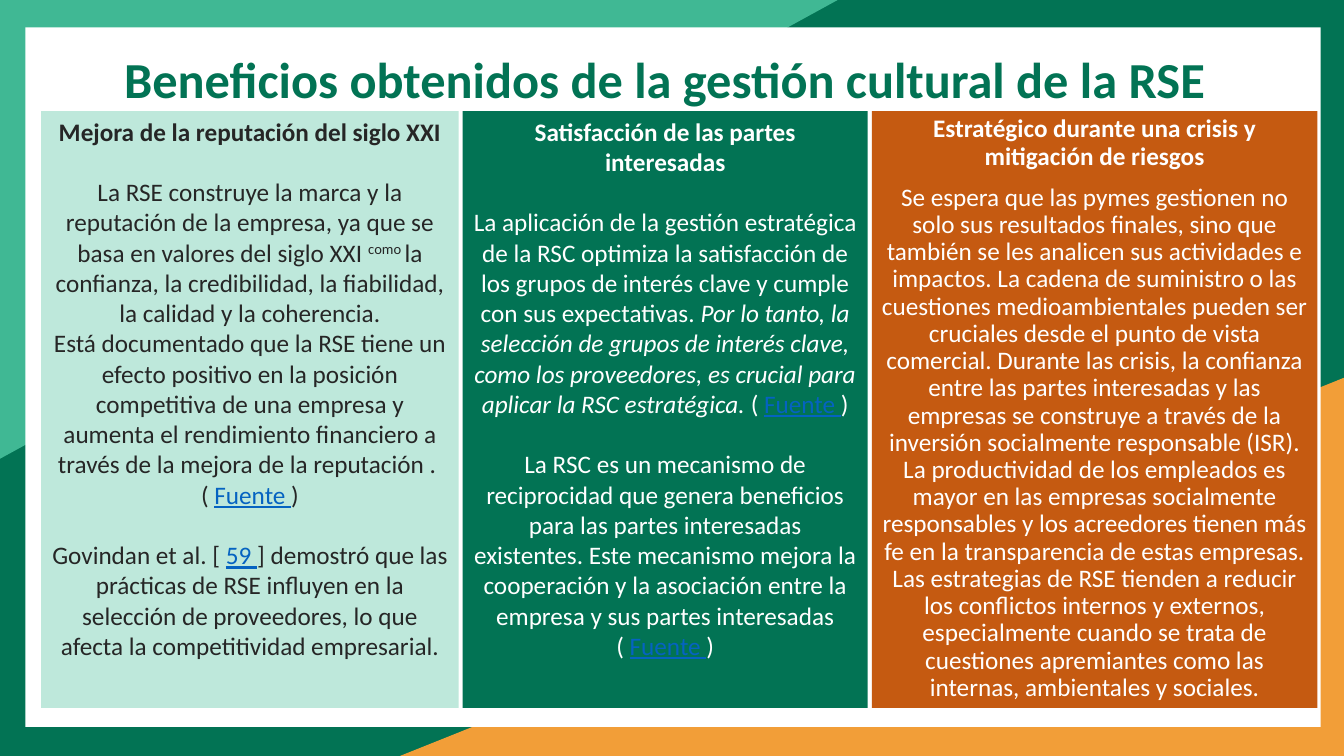
from pptx import Presentation
from pptx.dml.color import RGBColor
from pptx.enum.shapes import MSO_SHAPE as Shape
from pptx.enum.text import MSO_ANCHOR as Anchor, PP_ALIGN as Align
from pptx.util import Cm, Pt

SLIDE_W, SLIDE_H = 33.87, 19.05
GREEN, MINT, ORANGE, WHITE = "027354", "40B894", "F29E38", "FFFFFF"
PALE, RUST, INK, LINK = "BEE8DB", "C55A11", "262626", "0563C1"

TITLE = "Beneficios obtenidos de la gestión cultural de la RSE"
BLANK_LINE = 21.6  # points between separate blocks of text

BOLD = {"bold": True}
ITALIC = {"italic": True}
RAISED = {"raised": True}
LINKED = {"color": LINK, "underline": True}
SOURCE = ("Fuente ", LINKED)

# Each paragraph: space before in points, then its spans as (text, format)
REPUTATION = [
    (0, [("Mejora de la reputación del siglo XXI", BOLD)]),
    (BLANK_LINE, [
        ("La RSE construye la marca y la reputación de la empresa, ya que se basa "
         "en valores del siglo XXI ", {}),
        ("como ", RAISED),
        ("la confianza, la credibilidad, la fiabilidad, la calidad y la coherencia.", {})]),
    (0, [("Está documentado que la RSE tiene un efecto positivo en la posición "
          "competitiva de una empresa y aumenta el rendimiento financiero a través "
          "de la mejora de la reputación . ", {})]),
    (0, [("( ", {}), SOURCE, (")", {})]),
    (BLANK_LINE, [
        ("Govindan et al. [ ", {}),
        ("59 ", LINKED),
        ("] demostró que las prácticas de RSE influyen en la selección de "
         "proveedores, lo que afecta la competitividad empresarial.", {})]),
]
SATISFACTION = [
    (0, [("Satisfacción de las partes interesadas", BOLD)]),
    (BLANK_LINE, [
        ("La aplicación de la gestión estratégica de la RSC optimiza la satisfacción "
         "de los grupos de interés clave y cumple con sus expectativas. ", {}),
        ("Por lo tanto, la selección de grupos de interés clave, como los "
         "proveedores, es crucial para aplicar la RSC estratégica.", ITALIC),
        (" ( ", {}), SOURCE, (")", {})]),
    (BLANK_LINE, [
        ("La RSC es un mecanismo de reciprocidad que genera beneficios para las "
         "partes interesadas existentes. Este mecanismo mejora la cooperación y la "
         "asociación entre la empresa y sus partes interesadas ( ", {}),
        SOURCE, (")", {})]),
]
CRISIS = [
    (10, [("Estratégico durante una crisis y mitigación de riesgos", BOLD)]),
    (10, [("Se espera que las pymes gestionen no solo sus resultados finales, sino que "
           "también se les analicen sus actividades e impactos. La cadena de suministro "
           "o las cuestiones medioambientales pueden ser cruciales desde el punto de "
           "vista comercial. Durante las crisis, la confianza entre las partes "
           "interesadas y las empresas se construye a través de la inversión "
           "socialmente responsable (ISR). La productividad de los empleados es mayor "
           "en las empresas socialmente responsables y los acreedores tienen más fe en "
           "la transparencia de estas empresas. Las estrategias de RSE tienden a "
           "reducir los conflictos internos y externos, especialmente cuando se trata "
           "de cuestiones apremiantes como las internas, ambientales y sociales.", {})]),
]
# Width, fill, text colour, line spacing, paragraphs
COLUMNS = [
    (10.52, PALE, INK, 1.0, REPUTATION),
    (10.21, GREEN, WHITE, 1.0, SATISFACTION),
    (11.23, RUST, WHITE, 0.9, CRISIS),
]
COLUMN_LEFT, COLUMN_TOP, COLUMN_H, COLUMN_GAP = 1.04, 2.8, 15.04, 0.1


def rgb(color):
    return RGBColor.from_string(color)


def add_block(page, kind, left, top, width, height, fill):
    block = page.shapes.add_shape(kind, Cm(left), Cm(top), Cm(width), Cm(height))
    block.shadow.inherit = False
    block.fill.solid()
    block.fill.fore_color.rgb = rgb(fill)
    block.line.fill.background()
    return block


def add_span(para, text, size=18, color=INK, bold=False, italic=False,
             underline=False, raised=False):
    span = para.add_run()
    span.text = text
    font = span.font
    font.name, font.size, font.color.rgb = "Calibri", Pt(size), rgb(color)
    font.bold, font.italic, font.underline = bold, italic, underline
    if raised:
        span._r.get_or_add_rPr().set("baseline", "30000")


def write(box, paragraphs, spacing=1.0, **base):
    """Fill a box with centred paragraphs; span formats override the base."""
    frame = box.text_frame
    frame.word_wrap = True
    frame.vertical_anchor = Anchor.TOP
    for index, (before, spans) in enumerate(paragraphs):
        para = frame.add_paragraph() if index else frame.paragraphs[0]
        para.alignment = Align.CENTER
        para.line_spacing = spacing
        para.space_before = Pt(before)
        for text, style in spans:
            add_span(para, text, **{**base, **style})


def main():
    deck = Presentation()
    deck.slide_width, deck.slide_height = Cm(SLIDE_W), Cm(SLIDE_H)
    page = deck.slides.add_slide(deck.slide_layouts[6])

    add_block(page, Shape.RECTANGLE, 0, 0, SLIDE_W, SLIDE_H, GREEN)
    lower = add_block(page, Shape.ISOSCELES_TRIANGLE, 10.08, 9.52, 23.79, 9.53, ORANGE)
    upper = add_block(page, Shape.ISOSCELES_TRIANGLE, 0, 0, 21.11, 11.56, MINT)
    for corner in (lower, upper):
        corner.adjustments[0] = 1
    upper.rotation = 180
    add_block(page, Shape.RECTANGLE, 0.64, 0.69, 32.64, 17.63, WHITE)

    title = page.shapes.add_textbox(Cm(2.18), Cm(0.79), Cm(29.16), Cm(3.12))
    write(title, [(0, [(TITLE, BOLD)])], spacing=1.2, size=36, color=GREEN)

    left = COLUMN_LEFT
    for width, fill, color, spacing, paragraphs in COLUMNS:
        column = add_block(page, Shape.RECTANGLE, left, COLUMN_TOP, width, COLUMN_H, fill)
        write(column, paragraphs, spacing, color=color)
        left += width + COLUMN_GAP

    deck.save("out.pptx")


if __name__ == "__main__":
    main()
